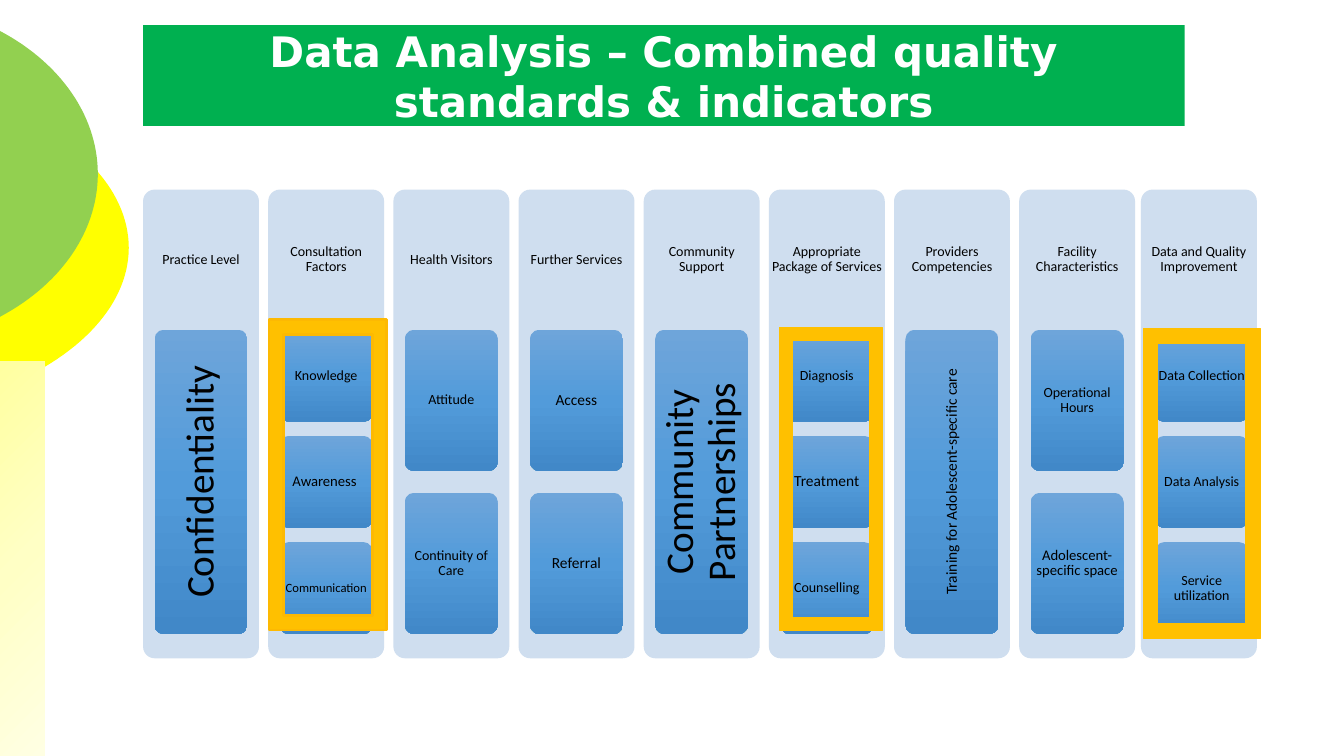
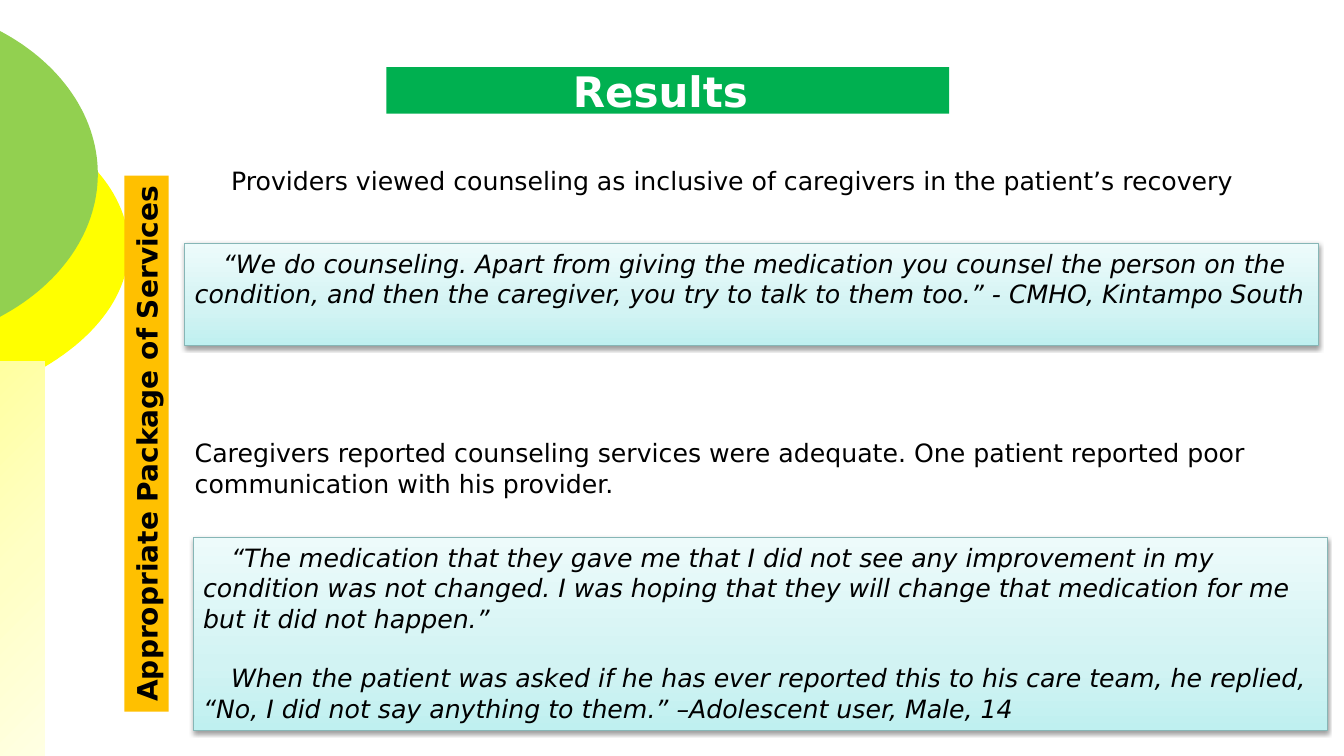
from dataclasses import dataclass
from math import acos, cos, sin

from lxml import etree
from pptx import Presentation
from pptx.dml.color import RGBColor
from pptx.enum.shapes import MSO_SHAPE
from pptx.enum.text import MSO_ANCHOR, MSO_AUTO_SIZE, PP_ALIGN
from pptx.oxml import parse_xml
from pptx.oxml.ns import nsdecls, qn
from pptx.util import Pt


@dataclass(frozen=True)
class Theme:
    green: str = "00B050"
    lime: str = "92D050"
    yellow: str = "FFFF00"
    amber: str = "FFC000"
    dark_amber: str = "FDB902"
    column: str = "CFDEEF"
    quote_line: str = "86B6B6"
    black: str = "000000"
    white: str = "FFFFFF"
    # Gradients: direction element, then (position, colour) stops
    side: tuple = ('<a:path path="circle"><a:fillToRect r="100000" b="100000"/></a:path>',
                   (0, "FFFFA0"), (50, "FFFFC5"), (100, "FFFFE3"))
    tile: tuple = ('<a:lin ang="5400000" scaled="0"/>',
                   (0, "6EA5DA"), (50, "529BDA"), (100, "4188C8"))
    quote: tuple = ('<a:lin ang="16200000" scaled="0"/>',
                    (0, "BFF0F0"), (35, "D2F3F3"), (100, "EDFBFB"))
    font: str = "DejaVu Sans"
    label_font: str = "Calibri"
    title_size: float = 30
    bar_size: float = 20
    body_size: float = 18
    label_size: float = 10


T = Theme()


def add_box(slide, kind, box, fill, line=None, weight=0.75):
    """Add a shape; box is in points, fill a colour or a gradient of T."""
    sp = slide.shapes.add_shape(kind, *[Pt(v) for v in box])
    sp.shadow.inherit = False
    sp.fill.solid()
    if isinstance(fill, str):
        sp.fill.fore_color.rgb = RGBColor.from_string(fill)
    else:
        direction, *stops = fill
        gs = "".join(f'<a:gs pos="{pos * 1000}"><a:srgbClr val="{c}"/></a:gs>' for pos, c in stops)
        grad = parse_xml(f'<a:gradFill {nsdecls("a")} rotWithShape="1">'
                         f"<a:gsLst>{gs}</a:gsLst>{direction}</a:gradFill>")
        spPr = sp._element.spPr
        spPr.replace(spPr.find(qn("a:solidFill")), grad)
    if line:
        sp.line.color.rgb = RGBColor.from_string(line)
        sp.line.width = Pt(weight)
    else:
        sp.line.fill.background()
    return sp


def write(sp, paras, size, font=T.font, color=T.black, bold=False, italic=False,
          align=PP_ALIGN.CENTER, anchor=MSO_ANCHOR.MIDDLE, margins=(7.2, 3.6),
          spacing=None, indent=0, gap=0, vertical=False):
    """Fill a shape with paragraphs; margins are (left and right, top and bottom)."""
    tf = sp.text_frame
    tf.word_wrap = True
    tf.auto_size = MSO_AUTO_SIZE.NONE
    tf.vertical_anchor = anchor
    tf.margin_left = tf.margin_right = Pt(margins[0])
    tf.margin_top = tf.margin_bottom = Pt(margins[1])
    if vertical:
        tf._txBody.bodyPr.set("vert", "vert270")
    for i, text in enumerate(paras):
        p = tf.add_paragraph() if i else tf.paragraphs[0]
        p.alignment = align
        if spacing:
            p.line_spacing = spacing
        if i and gap:
            p.space_before = Pt(gap)
        if indent:
            p._p.get_or_add_pPr().set("indent", str(Pt(indent)))
        r = p.add_run()
        r.text = text
        r.font.name, r.font.size = font, Pt(size)
        r.font.bold, r.font.italic = bold, italic
        r.font.color.rgb = RGBColor.from_string(color)


prs = Presentation()
prs.slide_width, prs.slide_height = Pt(960), Pt(540)
layout = prs.slide_layouts[5]
for ph in list(layout.placeholders):
    if ph.placeholder_format.idx:
        ph._element.getparent().remove(ph._element)

# Titles
slides = []
for title, box in [
    ("Data Analysis – Combined quality standards & indicators", (102.2, 18, 744, 72)),
    ("Results ", (276, 48, 402, 33.2)),
]:
    s = prs.slides.add_slide(layout)
    sp = s.shapes.title
    sp.left, sp.top, sp.width, sp.height = [Pt(v) for v in box]
    sp.fill.solid()
    sp.fill.fore_color.rgb = RGBColor.from_string(T.green)
    write(sp, [title], T.title_size, color=T.white, bold=True, margins=(5, 2.9))
    slides.append(s)
standards, results = slides

# Shared decoration: two ellipses cut at the left edge and a side band, kept on the layout
decor = []
STEPS = 60
for cx, cy, rx, ry, color in [(-124, 177, 216, 123, T.yellow),
                              (-92.5, 124.2, 162.4, 124.2, T.lime)]:
    half = acos(-cx / rx)
    angles = [half * (2 * k / STEPS - 1) for k in range(STEPS + 1)]
    points = [(Pt(cx + rx * cos(a)), Pt(cy + ry * sin(a))) for a in angles]
    builder = standards.shapes.build_freeform(*points[0])
    builder.add_line_segments(points[1:], close=True)
    sp = builder.convert_to_shape()
    sp.shadow.inherit = False
    sp.fill.solid()
    sp.fill.fore_color.rgb = RGBColor.from_string(color)
    sp.line.fill.background()
    decor.append(sp)
decor.append(add_box(standards, MSO_SHAPE.RECTANGLE, (0, 258, 32, 282), T.side))
for sp in decor:
    layout.shapes._spTree.append(sp._element)

# Slide 1: one column per standard, its indicators as (label, size) tiles
COLUMNS = [
    ("Practice Level", [("Confidentiality", 28)]),
    ("Consultation Factors", [("Knowledge", 10), ("Awareness ", 10.5), ("Communication", 9)]),
    ("Health Visitors", [("Attitude", 10), ("Continuity of Care", 10)]),
    ("Further Services", [("Access", 11), ("Referral", 11)]),
    ("Community Support", [("Community Partnerships", 28)]),
    ("Appropriate Package of Services",
     [("Diagnosis", 10), ("Treatment", 11), ("Counselling", 10)]),
    ("Providers Competencies", [("Training for Adolescent-specific care", 11)]),
    ("Facility Characteristics", [("Operational Hours", 10), ("Adolescent-specific space", 10.5)]),
    ("Data and Quality Improvement",
     [("Data Collection", 10), ("Data Analysis", 10), ("Service utilization", 10)]),
]
LEFT, TOP, PITCH = 102.2, 135.4, 89.4
COL_W, COL_H, HEAD_H = 82.8, 334.8, 100.2
TILE_W, TILES_TOP, TILES_H = 66.4, 235.5, 217.4
GAP_RATIO = 2 / 13
for i, (head, tiles) in enumerate(COLUMNS):
    last = i == len(COLUMNS) - 1
    x = 815 if last else LEFT + i * PITCH
    sp = add_box(standards, MSO_SHAPE.ROUNDED_RECTANGLE, (x, TOP, COL_W, COL_H), T.column)
    sp.adjustments[0] = 0.1
    tb = standards.shapes.add_textbox(Pt(x), Pt(TOP), Pt(COL_W), Pt(HEAD_H))
    write(tb, [head], T.label_size, T.label_font, margins=(1.4, 1.4), spacing=0.89)
    n = len(tiles)
    tile_h = TILES_H / (n + (n - 1) * GAP_RATIO)
    tile_x = x + (10.2 if last else (COL_W - TILE_W) / 2)
    for j, (label, size) in enumerate(tiles):
        y = TILES_TOP + j * tile_h * (1 + GAP_RATIO)
        sp = add_box(standards, MSO_SHAPE.ROUNDED_RECTANGLE, (tile_x, y, TILE_W, tile_h), T.tile)
        sp.adjustments[0] = 0.1
        write(sp, [label], size, T.label_font, margins=(0.6, 0.6), spacing=0.89, vertical=n == 1)

for box, line, weight in [
    ((556.6, 234, 73.4, 216), T.amber, 0.5),
    ((816.5, 234.7, 83.5, 221), T.amber, 0.25),
    ((192.2, 228.2, 84.2, 221.8), T.dark_amber, 2),
]:
    add_box(standards, MSO_SHAPE.FRAME, box, T.amber, line, weight)

# Slide 2: findings, each followed by a quote
bar = add_box(results, MSO_SHAPE.RECTANGLE, (88.8, 125.4, 31.6, 383), T.amber)
write(bar, ["Appropriate Package of Services"], T.bar_size, bold=True,
      margins=(3.6, 7.2), vertical=True)
bar.text_frame.word_wrap = False

for text, box, indent in [
    ("Providers viewed counseling as inclusive of caregivers in the patient’s recovery",
     (138, 114.5, 774, 29), 20),
    ("Caregivers reported counseling services were adequate. One patient reported poor "
     "communication with his provider.", (132, 309, 780, 51), 0),
]:
    tb = results.shapes.add_textbox(*[Pt(v) for v in box])
    write(tb, [text], T.body_size, align=PP_ALIGN.LEFT, anchor=MSO_ANCHOR.TOP, indent=indent)

for paras, box in [
    (["“We do counseling. Apart from giving the medication you counsel the person on the "
      "condition, and then the caregiver, you try to talk to them too.” - CMHO, Kintampo South"],
     (132, 174, 810, 73)),
    (["“The medication that they gave me that I did not see any improvement in my condition "
      "was not changed. I was hoping that they will change that medication for me but it did "
      "not happen.”",
      "When the patient was asked if he has ever reported this to his care team, he replied, "
      "“No, I did not say anything to them.” –Adolescent user, Male, 14"],
     (138, 384, 810, 138)),
]:
    sp = add_box(results, MSO_SHAPE.RECTANGLE, box, T.quote, T.quote_line)
    effects = sp._element.spPr.find(qn("a:effectLst"))
    shadow = etree.SubElement(effects, qn("a:outerShdw"), blurRad=str(Pt(3.1)),
                              dist=str(Pt(1.6)), dir="5400000", rotWithShape="0")
    shade = etree.SubElement(shadow, qn("a:srgbClr"), val=T.black)
    etree.SubElement(shade, qn("a:alpha"), val="38000")
    write(sp, paras, T.body_size, italic=True, align=PP_ALIGN.LEFT,
          anchor=MSO_ANCHOR.TOP, indent=20, gap=21)

prs.save("out.pptx")
